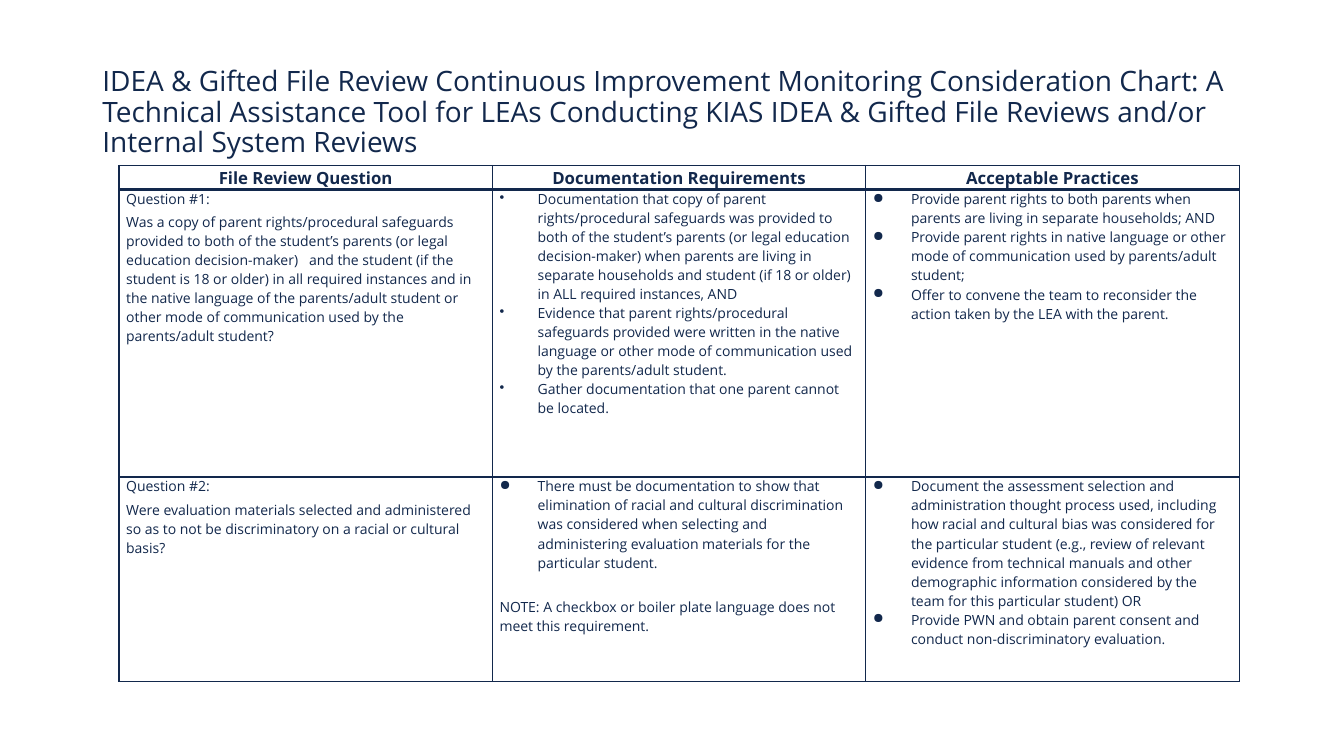
from dataclasses import dataclass

from lxml.etree import SubElement
from pptx import Presentation
from pptx.dml.color import RGBColor
from pptx.enum.text import MSO_ANCHOR, PP_ALIGN
from pptx.oxml.ns import qn
from pptx.slide import Slide
from pptx.table import _Cell
from pptx.text.text import _Paragraph
from pptx.util import Cm, Pt

NAVY = RGBColor(0x12, 0x28, 0x4C)
FONT = "Open Sans"
DOT = "•"
DISC = "●"
BULLET_INDENT = Cm(0.96)
COLUMN_WIDTH = Cm(9.41)
ROW_HEIGHTS = (Cm(0.61), Cm(7.24), Cm(5.16))
TITLE = (
    "IDEA & Gifted File Review Continuous Improvement Monitoring Consideration Chart: "
    "A Technical Assistance Tool for LEAs Conducting KIAS IDEA & Gifted File Reviews "
    "and/or Internal System Reviews"
)
HEADINGS = ("File Review Question", "Documentation Requirements", "Acceptable Practices")


@dataclass(frozen=True)
class Entry:
    text: str
    bullet: str = ""
    space_before: float = 0


@dataclass(frozen=True)
class ReviewRow:
    question: list[Entry]
    documentation: list[Entry]
    practices: list[Entry]


REVIEW_ROWS = [
    ReviewRow(
        question=[
            Entry("Question #1:"),
            Entry(
                "Was a copy of parent rights/procedural safeguards provided to both of the "
                "student’s parents (or legal education decision-maker)   and the student (if the "
                "student is 18 or older) in all required instances and in the native language of "
                "the parents/adult student or other mode of communication used by the "
                "parents/adult student?",
                space_before=2.9,
            ),
        ],
        documentation=[
            Entry(
                "Documentation that copy of parent rights/procedural safeguards was provided to "
                "both of the student’s parents (or legal education decision-maker) when parents "
                "are living in separate households and student (if 18 or older) in ALL required "
                "instances, AND",
                DOT,
            ),
            Entry(
                "Evidence that parent rights/procedural safeguards provided were written in the "
                "native language or other mode of communication used by the parents/adult student.",
                DOT,
            ),
            Entry("Gather documentation that one parent cannot be located.", DOT),
        ],
        practices=[
            Entry(
                "Provide parent rights to both parents when parents are living in separate "
                "households; AND",
                DISC,
            ),
            Entry(
                "Provide parent rights in native language or other mode of communication used by "
                "parents/adult student;",
                DISC,
                0.1,
            ),
            Entry(
                "Offer to convene the team to reconsider the action taken by the LEA with the "
                "parent.",
                DISC,
                0.1,
            ),
        ],
    ),
    ReviewRow(
        question=[
            Entry("Question #2:"),
            Entry(
                "Were evaluation materials selected and administered so as to not be "
                "discriminatory on a racial or cultural basis?",
                space_before=2.9,
            ),
        ],
        documentation=[
            Entry(
                "There must be documentation to show that elimination of racial and cultural "
                "discrimination was considered when selecting and administering evaluation "
                "materials for the particular student.",
                DISC,
            ),
            Entry(
                "NOTE: A checkbox or boiler plate language does not meet this requirement.",
                space_before=18.5,
            ),
        ],
        practices=[
            Entry(
                "Document the assessment selection and administration thought process used, "
                "including how racial and cultural bias was considered for the particular student "
                "(e.g., review of relevant evidence from technical manuals and other demographic "
                "information considered by the team for this particular student) OR",
                DISC,
            ),
            Entry(
                "Provide PWN and obtain parent consent and conduct non-discriminatory evaluation.",
                DISC,
            ),
        ],
    ),
]


def set_font(para: _Paragraph, size: float, bold: bool = False) -> None:
    para.font.name = FONT
    para.font.size = Pt(size)
    para.font.bold = bold
    para.font.color.rgb = NAVY


def add_bullet(para: _Paragraph, bullet: str) -> None:
    properties = para._p.get_or_add_pPr()
    properties.set("marL", str(BULLET_INDENT))
    properties.set("indent", str(-BULLET_INDENT))
    SubElement(properties, qn("a:buChar"), char=bullet)


def set_borders(cell: _Cell, top: float, bottom: float) -> None:
    """Draw all four cell borders; the sides are always 1 pt."""
    properties = cell._tc.get_or_add_tcPr()
    for side, width in (("L", 1), ("R", 1), ("T", top), ("B", bottom)):
        line = SubElement(properties, qn(f"a:ln{side}"), w=str(Pt(width)))
        fill = SubElement(line, qn("a:solidFill"))
        SubElement(fill, qn("a:srgbClr"), val=str(NAVY))


def fill_cell(cell: _Cell, entries: list[Entry], is_heading: bool) -> None:
    cell.margin_left = cell.margin_right = Cm(0.18)
    cell.margin_top = cell.margin_bottom = 0
    cell.vertical_anchor = MSO_ANCHOR.MIDDLE if is_heading else MSO_ANCHOR.TOP
    frame = cell.text_frame
    for index, entry in enumerate(entries):
        para = frame.add_paragraph() if index else frame.paragraphs[0]
        para.text = entry.text
        if is_heading:
            para.alignment = PP_ALIGN.CENTER
        if entry.space_before:
            para.space_before = Pt(entry.space_before)
        if entry.bullet:
            add_bullet(para, entry.bullet)
        set_font(para, 12 if is_heading else 10, bold=is_heading)


def add_title(page: Slide) -> None:
    box = page.shapes.add_textbox(Cm(2.33), Cm(1.01), Cm(29.21), Cm(3.68))
    frame = box.text_frame
    frame.word_wrap = True
    frame.vertical_anchor = MSO_ANCHOR.MIDDLE
    para = frame.paragraphs[0]
    para.text = TITLE
    para.line_spacing = 0.9
    set_font(para, 20)


def add_review_table(page: Slide) -> None:
    contents = [[[Entry(heading)] for heading in HEADINGS]]
    contents += [[row.question, row.documentation, row.practices] for row in REVIEW_ROWS]
    table = page.shapes.add_table(
        len(contents), len(HEADINGS), Cm(3), Cm(4.17),
        COLUMN_WIDTH * len(HEADINGS), sum(ROW_HEIGHTS),
    ).table
    table.first_row = table.horz_banding = False
    for column in table.columns:
        column.width = COLUMN_WIDTH
    for row_index, (height, cells) in enumerate(zip(ROW_HEIGHTS, contents)):
        table.rows[row_index].height = height
        for column_index, entries in enumerate(cells):
            cell = table.cell(row_index, column_index)
            fill_cell(cell, entries, is_heading=row_index == 0)
            set_borders(
                cell,
                top=2 if row_index == 1 else 1,
                bottom=2 if row_index == 0 else 1,
            )
            cell.fill.background()


def main() -> None:
    deck = Presentation()
    deck.slide_width, deck.slide_height = Cm(33.87), Cm(19.05)
    page = deck.slides.add_slide(deck.slide_layouts[6])
    add_title(page)
    add_review_table(page)
    deck.save("out.pptx")


if __name__ == "__main__":
    main()
